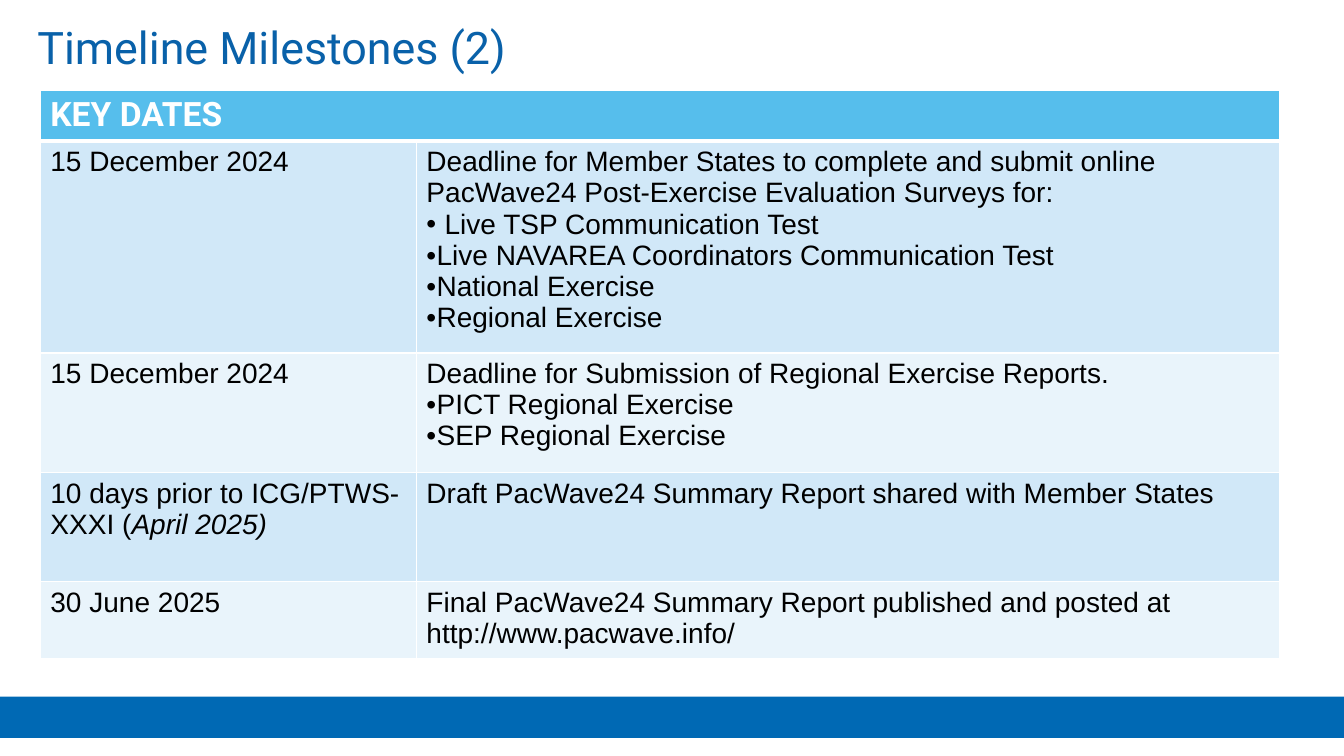
from dataclasses import dataclass

from lxml.etree import SubElement
from pptx import Presentation
from pptx.dml.color import RGBColor as RGB
from pptx.enum.shapes import MSO_SHAPE as Shape
from pptx.enum.text import MSO_ANCHOR as Anchor, MSO_AUTO_SIZE as AutoSize, PP_ALIGN as Align
from pptx.oxml.ns import qn
from pptx.util import Inches, Pt


@dataclass(frozen=True)
class Theme:
    title: RGB = RGB.from_string("0961A9")
    footer: RGB = RGB.from_string("0069B4")
    header: RGB = RGB.from_string("56BEEC")
    bands: tuple = (RGB.from_string("D1E8F8"), RGB.from_string("E9F4FB"))
    white: RGB = RGB.from_string("FFFFFF")
    black: RGB = RGB.from_string("000000")
    heading_font: str = "Roboto"
    body_font: str = "Arial"
    title_size: int = 32
    header_size: int = 24
    body_size: int = 20


THEME = Theme()
BULLET_INDENT = 0.1
SPACED_INDENT = 0.18
COLUMN_WIDTHS = (3.73, 8.56)
ROW_HEIGHTS = (0.49, 2.06, 1.19, 1.08, 0.75)

MILESTONES = [
    (
        "15 December 2024", "",
        "Deadline for Member States to complete and submit online "
        "PacWave24 Post-Exercise Evaluation Surveys for:",
        [
            ("Live TSP Communication Test", SPACED_INDENT),
            ("Live NAVAREA Coordinators Communication Test", BULLET_INDENT),
            ("National Exercise", BULLET_INDENT),
            ("Regional Exercise", BULLET_INDENT),
        ],
    ),
    (
        "15 December 2024", "",
        "Deadline for Submission of Regional Exercise Reports.",
        [
            ("PICT Regional Exercise", BULLET_INDENT),
            ("SEP Regional Exercise", BULLET_INDENT),
        ],
    ),
    (
        "10 days prior to ICG/PTWS-XXXI (", "April 2025)",
        "Draft PacWave24 Summary Report shared with Member States", [],
    ),
    (
        "30 June 2025", "",
        "Final PacWave24 Summary Report published and posted at http://www.pacwave.info/", [],
    ),
]


def write(paragraph, text, font=THEME.body_font, size=THEME.body_size,
          color=THEME.black, bold=False, italic=False, bullet_indent=None):
    paragraph.alignment = Align.LEFT
    if bullet_indent is not None:
        properties = paragraph._p.get_or_add_pPr()
        properties.set("marL", str(Inches(bullet_indent)))
        properties.set("indent", str(-Inches(bullet_indent)))
        SubElement(properties, qn("a:buFont"), typeface=THEME.body_font)
        SubElement(properties, qn("a:buChar"), char="•")
    run = paragraph.add_run()
    run.text = text
    run.font.name = font
    run.font.size = Pt(size)
    run.font.color.rgb = color
    run.font.bold = bold
    run.font.italic = italic


def style_cell(cell, fill, top=1, bottom=1):
    properties = cell._tc.get_or_add_tcPr()
    for side, width in (("L", 1), ("R", 1), ("T", top), ("B", bottom)):
        border = SubElement(properties, qn(f"a:ln{side}"), w=str(Pt(width)))
        solid = SubElement(border, qn("a:solidFill"))
        SubElement(solid, qn("a:srgbClr"), val=str(THEME.white))
    cell.fill.solid()
    cell.fill.fore_color.rgb = fill


def add_title(slide, left, top, width, height):
    title = slide.shapes.title
    title.left, title.top = Inches(left), Inches(top)
    title.width, title.height = Inches(width), Inches(height)
    frame = title.text_frame
    frame.word_wrap = True
    frame.auto_size = AutoSize.SHAPE_TO_FIT_TEXT
    frame.vertical_anchor = Anchor.TOP
    write(frame.paragraphs[0], "Timeline Milestones (2)", font=THEME.heading_font,
          size=THEME.title_size, color=THEME.title)


def add_footer_band(slide, left, top, width, height):
    band = slide.shapes.add_shape(Shape.RECTANGLE, Inches(left), Inches(top),
                                  Inches(width), Inches(height))
    band.shadow.inherit = False
    band.fill.solid()
    band.fill.fore_color.rgb = THEME.footer
    band.line.fill.background()


def add_milestone_table(slide, left, top, width, height):
    table = slide.shapes.add_table(len(ROW_HEIGHTS), len(COLUMN_WIDTHS), Inches(left),
                                   Inches(top), Inches(width), Inches(height)).table
    table.horz_banding = False
    for column, share in zip(table.columns, COLUMN_WIDTHS):
        column.width = Inches(width * share / sum(COLUMN_WIDTHS))
    for row, share in zip(table.rows, ROW_HEIGHTS):
        row.height = Inches(height * share / sum(ROW_HEIGHTS))

    key_dates = table.cell(0, 0)
    key_dates.merge(table.cell(0, 1))
    for cell in table.rows[0].cells:
        style_cell(cell, THEME.header, bottom=3)
    write(key_dates.text_frame.paragraphs[0], "KEY DATES", font=THEME.heading_font,
          size=THEME.header_size, color=THEME.white, bold=True)

    for index, (date, date_note, milestone, items) in enumerate(MILESTONES):
        date_cell, milestone_cell = table.rows[index + 1].cells
        for cell in (date_cell, milestone_cell):
            style_cell(cell, THEME.bands[index % 2], top=1 if index else 3)
        date_line = date_cell.text_frame.paragraphs[0]
        write(date_line, date)
        if date_note:
            write(date_line, date_note, italic=True)
        details = milestone_cell.text_frame
        write(details.paragraphs[0], milestone)
        for item, indent in items:
            write(details.add_paragraph(), item, bullet_indent=indent)


def main():
    deck = Presentation()
    deck.slide_width, deck.slide_height = Inches(13.33), Inches(7.5)
    slide = deck.slides.add_slide(deck.slide_layouts[5])
    add_footer_band(slide, 0, 6.91, 13.33, 0.41)
    add_milestone_table(slide, 0.4, 0.9, 12.29, 5.57)
    add_title(slide, 0.27, 0.15, 13.06, 0.64)
    deck.save("out.pptx")


if __name__ == "__main__":
    main()
